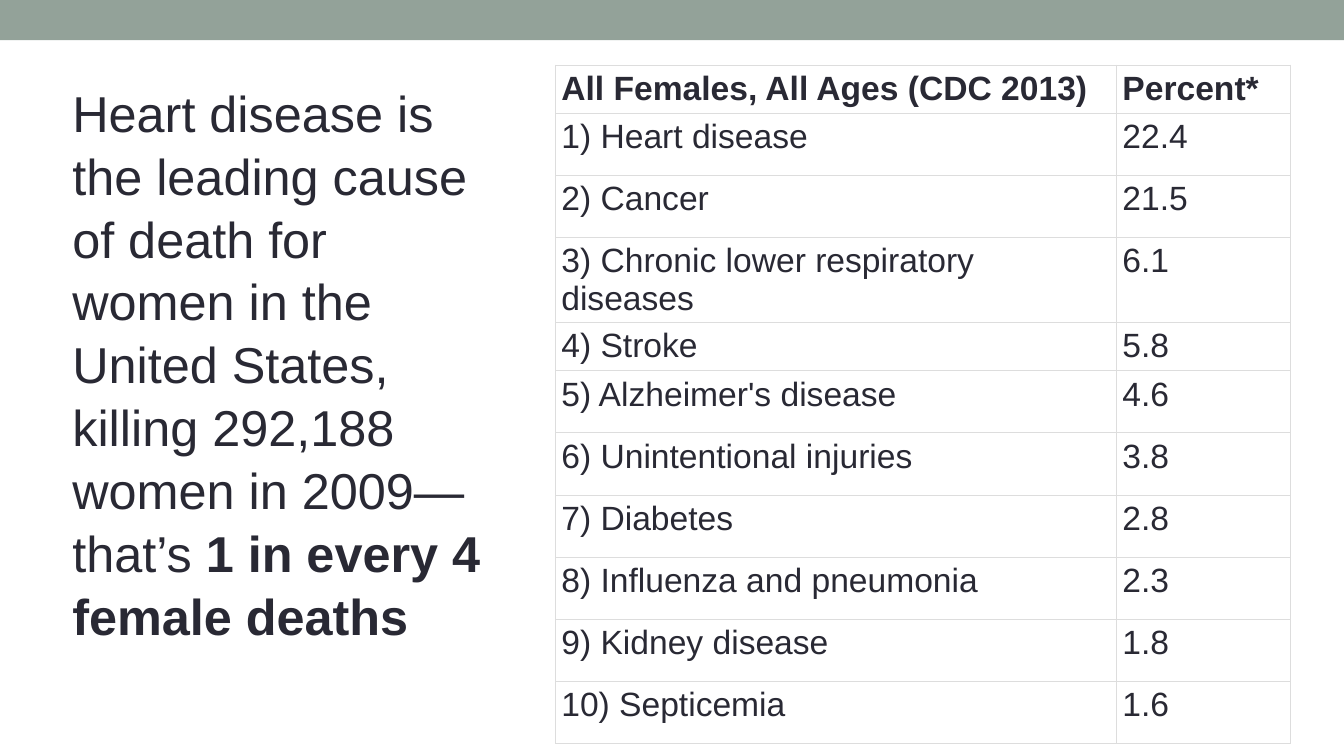
from lxml import etree
from pptx import Presentation
from pptx import util as u
from pptx.dml import color
from pptx.enum import shapes, text
from pptx.oxml import ns

FONT = "Arial"
INK = "292934"
WHITE = "FFFFFF"
BORDER = "DDDDDD"
SAGE = "93A299"

CAUSES = [
    ("Heart disease", "22.4"),
    ("Cancer", "21.5"),
    ("Chronic lower respiratory diseases", "6.1"),
    ("Stroke", "5.8"),
    ("Alzheimer's disease", "4.6"),
    ("Unintentional injuries", "3.8"),
    ("Diabetes", "2.8"),
    ("Influenza and pneumonia", "2.3"),
    ("Kidney disease", "1.8"),
    ("Septicemia", "1.6"),
]
ROW_HEIGHT = 44.4
SPECIAL_HEIGHTS = {0: 34.4, 3: 60.8, 4: 34.4}


def rgb(value):
    return color.RGBColor.from_string(value)


def points(*values):
    return [u.Pt(value) for value in values]


def set_fill(target, value):
    target.fill.solid()
    target.fill.fore_color.rgb = rgb(value)


def set_font(paragraph, size, bold=None):
    paragraph.font.name = FONT
    paragraph.font.size = u.Pt(size)
    paragraph.font.color.rgb = rgb(INK)
    paragraph.font.bold = bold


def set_borders(cell):
    properties = cell._tc.get_or_add_tcPr()
    for position, side in enumerate(("lnL", "lnR", "lnT", "lnB")):
        line = etree.Element(ns.qn(f"a:{side}"), w=str(u.Pt(0.5)))
        fill = etree.SubElement(line, ns.qn("a:solidFill"))
        etree.SubElement(fill, ns.qn("a:srgbClr"), val=BORDER)
        properties.insert(position, line)


def add_band(slide, left, top, width, height):
    band = slide.shapes.add_shape(
        shapes.MSO_SHAPE.RECTANGLE, *points(left, top, width, height))
    band.shadow.inherit = False
    set_fill(band, SAGE)
    band.line.fill.background()


def add_statement(slide, left, top, width, height):
    box = slide.shapes.add_textbox(*points(left, top, width, height))
    box.text_frame.word_wrap = True
    paragraph = box.text_frame.paragraphs[0]
    set_font(paragraph, 36)
    paragraph.line_spacing = 1.045
    paragraph.space_before = u.Pt(7.2)
    paragraph.add_run().text = (
        "Heart disease is the leading cause of death for women in the "
        "United States, killing 292,188 women in 2009—that’s ")
    emphasis = paragraph.add_run()
    emphasis.text = "1 in every 4 female deaths"
    emphasis.font.bold = True


def fill_cell(cell, wording, header):
    cell.margin_left = cell.margin_right = u.Pt(4.3)
    cell.margin_top = cell.margin_bottom = u.Pt(3.6)
    cell.vertical_anchor = (
        text.MSO_ANCHOR.BOTTOM if header else text.MSO_ANCHOR.TOP)
    set_fill(cell, WHITE)
    set_borders(cell)
    cell.text = wording
    set_font(cell.text_frame.paragraphs[0], 24, header)


def add_causes_table(slide, left, top, width, height):
    rows = [("All Females, All Ages (CDC 2013)", "Percent*")]
    rows += [(f"{rank}) {cause}", percent)
             for rank, (cause, percent) in enumerate(CAUSES, 1)]
    table = slide.shapes.add_table(
        len(rows), 2, *points(left, top, width, height)).table
    percent_width = 124.4
    table.columns[0].width = u.Pt(width - percent_width)
    table.columns[1].width = u.Pt(percent_width)
    for index, row in enumerate(rows):
        table.rows[index].height = u.Pt(SPECIAL_HEIGHTS.get(index, ROW_HEIGHT))
        for column, wording in enumerate(row):
            fill_cell(table.cell(index, column), wording, index == 0)


def main():
    presentation = Presentation()
    presentation.slide_width = u.Pt(960)
    presentation.slide_height = u.Pt(540)
    slide = presentation.slides.add_slide(presentation.slide_layouts[6])
    add_band(slide, 0, 0, 960, 28.8)
    add_causes_table(slide, 396.7, 46.4, 525.2, 484.8)
    add_statement(slide, 44.6, 53.3, 309.6, 300.2)
    presentation.save("out.pptx")


if __name__ == "__main__":
    main()
